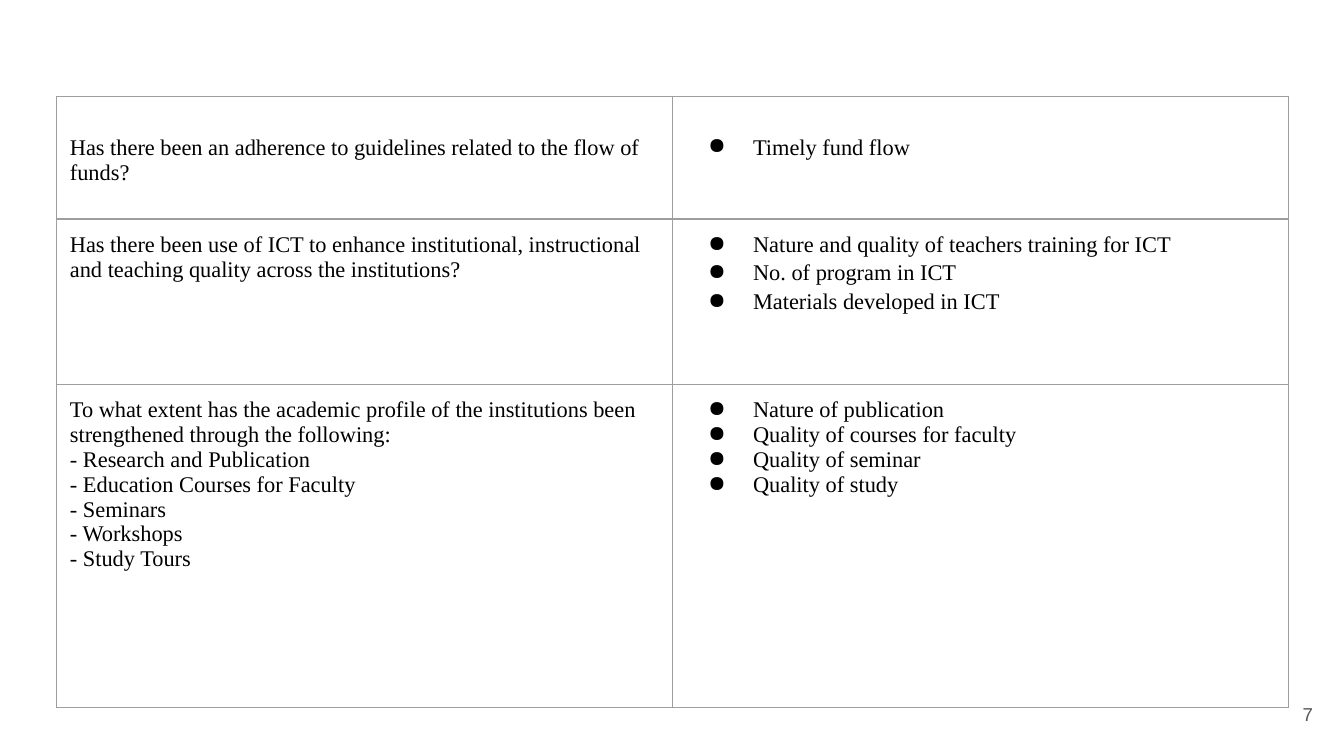
from lxml.etree import SubElement
from pptx import Presentation
from pptx.dml.color import RGBColor
from pptx.enum.text import MSO_ANCHOR, PP_ALIGN
from pptx.oxml.ns import qn
from pptx.util import Pt

BLACK = RGBColor(0x00, 0x00, 0x00)
GRAY = RGBColor(0x59, 0x59, 0x59)
BORDER = RGBColor(0x9E, 0x9E, 0x9E)

INSET = 7.2
FIRST_ROW_INSET = 20.6
ROW_HEIGHTS = [65.5, 88.5, 173]
COLUMN_WIDTH = 330

EVALUATION = [
    (
        ["Has there been an adherence to guidelines related to the flow of funds?"],
        ["Timely fund flow"],
        1,
    ),
    (
        ["Has there been use of ICT to enhance institutional, instructional "
         "and teaching quality across the institutions?"],
        ["Nature and quality of teachers training for ICT",
         "No. of program in ICT",
         "Materials developed in ICT"],
        1.15,
    ),
    (
        ["To what extent has the academic profile of the institutions been "
         "strengthened through the following:",
         "- Research and Publication",
         "- Education Courses for Faculty",
         "- Seminars",
         "- Workshops",
         "- Study Tours"],
        ["Nature of publication",
         "Quality of courses for faculty",
         "Quality of seminar",
         "Quality of study"],
        1,
    ),
]


class SlideBuilder:
    def __init__(self, slide):
        self.slide = slide
        self.body_font = "Times New Roman"
        self.body_size = 12

    def run(self, paragraph, text, font, size, color):
        run = paragraph.add_run()
        run.text = text
        run.font.name = font
        run.font.size = Pt(size)
        run.font.color.rgb = color

    def bullet(self, paragraph):
        properties = paragraph._p.get_or_add_pPr()
        properties.set("marL", str(Pt(36)))
        properties.set("indent", str(-Pt(24)))
        color = SubElement(properties, qn("a:buClr"))
        SubElement(color, qn("a:srgbClr"), val=str(BLACK))
        SubElement(properties, qn("a:buChar"), char="●")

    def borders(self, cell):
        properties = cell._tc.get_or_add_tcPr()
        for side in ("lnL", "lnR", "lnT", "lnB"):
            line = SubElement(properties, qn(f"a:{side}"), w=str(Pt(0.75)))
            fill = SubElement(line, qn("a:solidFill"))
            SubElement(fill, qn("a:srgbClr"), val=str(BORDER))

    def cell(self, cell, lines, top_inset, bulleted=False, spacing=1):
        cell.margin_left = cell.margin_right = cell.margin_bottom = Pt(INSET)
        cell.margin_top = Pt(top_inset)
        self.borders(cell)
        cell.fill.background()
        frame = cell.text_frame
        for index, line in enumerate(lines):
            paragraph = frame.add_paragraph() if index else frame.paragraphs[0]
            paragraph.line_spacing = spacing if index else 1.0
            if bulleted:
                self.bullet(paragraph)
            self.run(paragraph, line, self.body_font, self.body_size, BLACK)

    def table(self, left, top, rows):
        table = self.slide.shapes.add_table(
            len(rows), 2, Pt(left), Pt(top),
            Pt(2 * COLUMN_WIDTH), Pt(sum(ROW_HEIGHTS))).table
        table.first_row = False
        table.horz_banding = False
        for column in table.columns:
            column.width = Pt(COLUMN_WIDTH)
        for index, (questions, indicators, spacing) in enumerate(rows):
            table.rows[index].height = Pt(ROW_HEIGHTS[index])
            top_inset = INSET if index else FIRST_ROW_INSET
            self.cell(table.cell(index, 0), questions, top_inset)
            self.cell(table.cell(index, 1), indicators, top_inset, True, spacing)

    def page_number(self, left, top, width, height, number):
        frame = self.slide.shapes.add_textbox(
            Pt(left), Pt(top), Pt(width), Pt(height)).text_frame
        frame.word_wrap = True
        frame.vertical_anchor = MSO_ANCHOR.MIDDLE
        frame.margin_left = frame.margin_right = Pt(INSET)
        frame.margin_top = frame.margin_bottom = Pt(INSET)
        paragraph = frame.paragraphs[0]
        paragraph.alignment = PP_ALIGN.RIGHT
        self.run(paragraph, number, "Arial", 10, GRAY)


def main():
    presentation = Presentation()
    presentation.slide_width = Pt(720)
    presentation.slide_height = Pt(405)
    builder = SlideBuilder(
        presentation.slides.add_slide(presentation.slide_layouts[6]))
    builder.table(30.24, 51.84, EVALUATION)
    builder.page_number(667.2, 367.2, 43.2, 31, "7")
    presentation.save("out.pptx")


if __name__ == "__main__":
    main()
